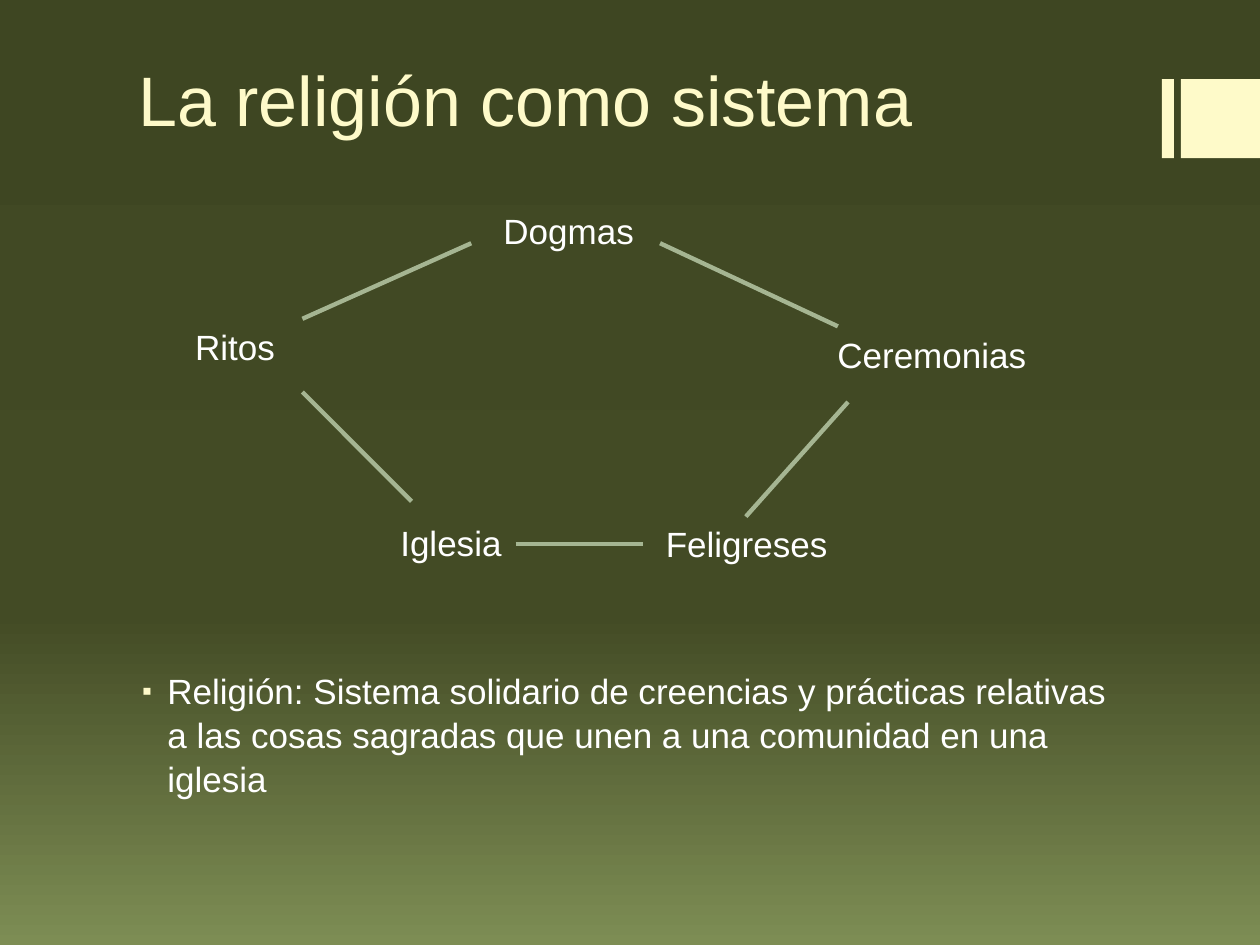
import copy

import pptx
import pptx.dml.color
import pptx.enum.shapes
import pptx.enum.text
import pptx.oxml
import pptx.oxml.ns
import pptx.util
from lxml import etree

Pt = pptx.util.Pt
qn = pptx.oxml.ns.qn
ALIGN = pptx.enum.text.PP_ALIGN
ANCHOR = pptx.enum.text.MSO_ANCHOR


class Deck:
    """Holds the style and the current slide, and draws each kind of element."""

    face = "Arial"
    hues = {
        "cream": "FEFAC9",
        "white": "FFFFFF",
        "sage": "A5B592",
        "dark": "3E4622",
        "moss": "434B25",
        "light": "7D8D54",
    }

    def __init__(self, width, height):
        self.prs = pptx.Presentation()
        self.prs.slide_width, self.prs.slide_height = Pt(width), Pt(height)
        self.slide = self.prs.slides.add_slide(self.prs.slide_layouts[6])

    def hue(self, name):
        return pptx.dml.color.RGBColor.from_string(self.hues[name])

    def back(self, stops):
        fill = self.slide.background.fill
        fill.gradient()
        fill.gradient_angle = 270
        first = self.slide.element.find(".//" + qn("a:gs"))
        first.addnext(copy.deepcopy(first))
        for stop, (place, name) in zip(fill.gradient_stops, stops):
            stop.position = place
            stop.color.rgb = self.hue(name)

    def block(self, left, top, width, height, name):
        kind = pptx.enum.shapes.MSO_SHAPE.RECTANGLE
        shape = self.slide.shapes.add_shape(kind, Pt(left), Pt(top), Pt(width), Pt(height))
        shape.shadow.inherit = False
        shape.fill.solid()
        shape.fill.fore_color.rgb = self.hue(name)
        shape.line.fill.background()

    def text(self, words, left, top, width, height, size=20, name="white",
             align=ALIGN.LEFT, anchor=ANCHOR.TOP, mark=None):
        box = self.slide.shapes.add_textbox(Pt(left), Pt(top), Pt(width), Pt(height))
        frame = box.text_frame
        frame.word_wrap = True
        frame.vertical_anchor = anchor
        para = frame.paragraphs[0]
        para.text = words
        para.alignment = align
        if mark:
            self.bullet(para, mark)
        para.font.name = self.face
        para.font.size = Pt(size)
        para.font.color.rgb = self.hue(name)

    def bullet(self, para, mark):
        para.line_spacing = 1.05
        props = para._p.get_or_add_pPr()
        props.set("marL", str(Pt(18)))
        props.set("indent", str(-Pt(14.4)))
        tint = etree.SubElement(props, qn("a:buClr"))
        etree.SubElement(tint, qn("a:srgbClr"), val=self.hues["cream"])
        etree.SubElement(props, qn("a:buSzPct"), val="80000")
        etree.SubElement(props, qn("a:buFont"), typeface=self.face)
        etree.SubElement(props, qn("a:buChar"), char=mark)

    def link(self, start, end, name="sage", weight=2.5):
        kind = pptx.enum.shapes.MSO_CONNECTOR.STRAIGHT
        ends = [Pt(value) for value in (*start, *end)]
        line = self.slide.shapes.add_connector(kind, *ends)
        line.line.color.rgb = self.hue(name)
        line.line.width = Pt(weight)
        etree.SubElement(line._element.spPr, qn("a:effectLst"))


def main():
    deck = Deck(720, 540)
    deck.back([(0, "dark"), (0.65, "moss"), (1, "light")])
    for left, width in ((664, 6.8), (674.8, 45.2)):
        deck.block(left, 45.2, width, 45.2, "cream")

    deck.text("La religión como sistema", 72, 21.6, 576, 62,
              size=40, name="cream", anchor=ANCHOR.BOTTOM)
    deck.text("Religión: Sistema solidario de creencias y prácticas relativas "
              "a las cosas sagradas que unen a una comunidad en una iglesia",
              70.6, 378, 576, 102, mark="▪")

    parts = [
        ("Ritos", 104.4, 182.4, 90.7, ALIGN.LEFT),
        ("Dogmas", 280.6, 116.4, 90.7, ALIGN.LEFT),
        ("Ceremonias", 468, 186.8, 129, ALIGN.CENTER),
        ("Iglesia", 212.4, 294.6, 90.7, ALIGN.CENTER),
        ("Feligreses", 368, 295.2, 117.4, ALIGN.CENTER),
    ]
    for words, left, top, width, align in parts:
        deck.text(words, left, top, width, 31.7, align=align)

    links = [
        ((269.3, 139), (172.8, 182.2)),
        ((172.8, 224), (235.2, 286.5)),
        ((478.8, 186.5), (377.2, 139)),
        ((484.6, 229.7), (426.2, 295.2)),
        ((294.6, 311), (367.6, 311)),
    ]
    for start, end in links:
        deck.link(start, end)

    deck.prs.save("out.pptx")


if __name__ == "__main__":
    main()
